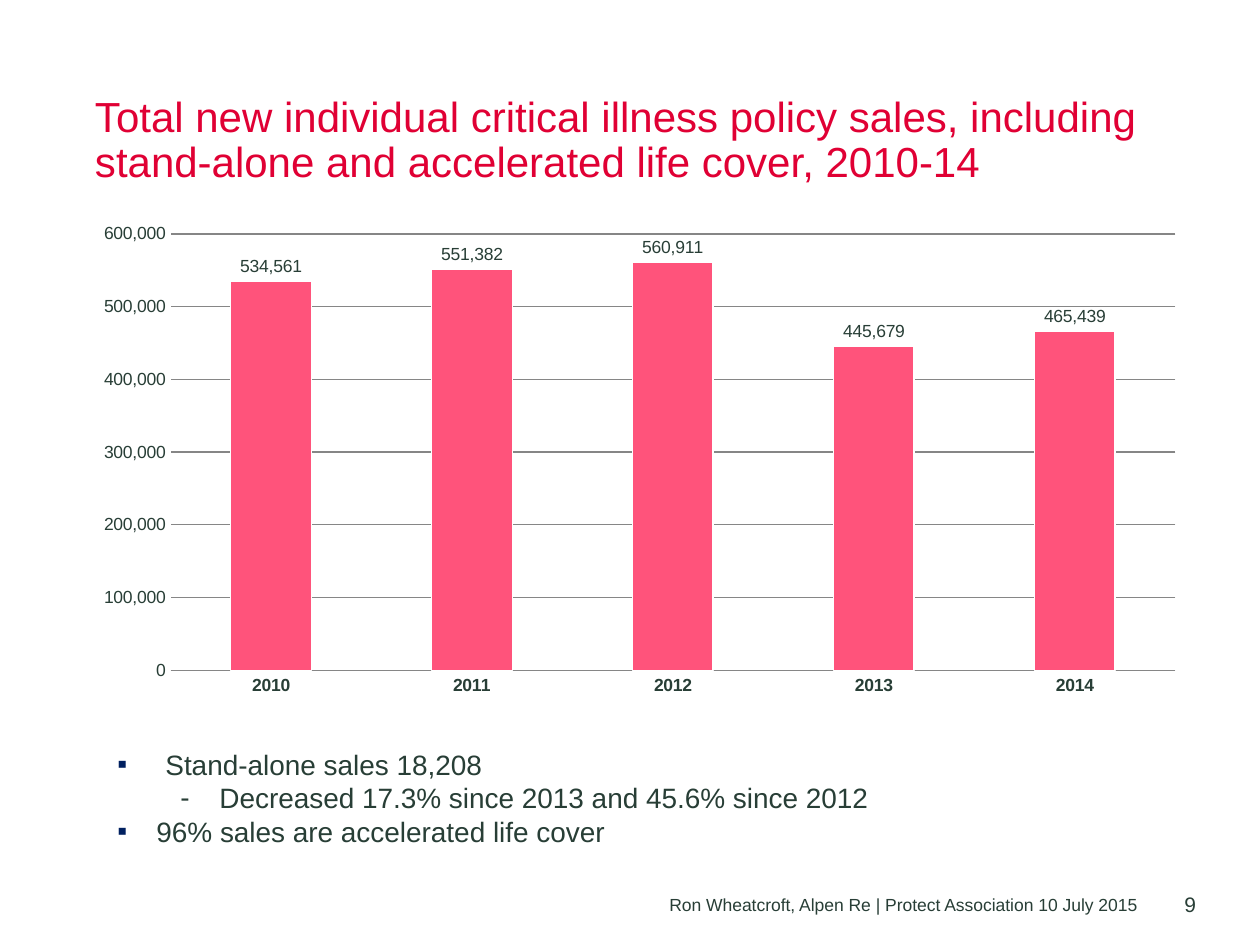
from lxml.etree import SubElement
from pptx import Presentation
from pptx.chart.data import CategoryChartData
from pptx.dml.color import RGBColor
from pptx.enum.chart import XL_CHART_TYPE as ChartType
from pptx.enum.chart import XL_LABEL_POSITION as LabelPosition
from pptx.enum.chart import XL_TICK_MARK as TickMark
from pptx.enum.text import MSO_ANCHOR as Anchor
from pptx.enum.text import MSO_AUTO_SIZE as AutoSize
from pptx.enum.text import PP_ALIGN as Align
from pptx.oxml import parse_xml
from pptx.oxml.ns import nsdecls, qn
from pptx.util import Emu, Pt

PX_PER_INCH = 126
FONT = "Arial"
RED = "E00034"
PINK = "FF537B"
INK = "283E36"
NAVY = "002060"
GRID = "868686"
WHITE = "FFFFFF"

SALES = {"2010": 534561, "2011": 551382, "2012": 560911, "2013": 445679, "2014": 465439}
BULLETS = [
    ("Stand-alone sales 18,208", 0, 48, 48, "▪", NAVY),
    ("Decreased 17.3% since 2013 and 45.6% since 2012", 1, 102, 39, "‑", INK),
    ("96% sales are accelerated life cover", 0, 39, 39, "▪", NAVY),
]


def px(length):
    return Emu(round(length * 914400 / PX_PER_INCH))


def color(value):
    return RGBColor.from_string(value)


def set_font(font, size, value=INK, bold=False):
    font.name = FONT
    font.size = Pt(size)
    font.bold = bold
    font.color.rgb = color(value)


def clear_insets(frame):
    frame.margin_left = frame.margin_top = frame.margin_right = frame.margin_bottom = 0


def add_title(slide, box):
    title = slide.shapes.title
    title.left, title.top, title.width, title.height = map(px, box)
    frame = title.text_frame
    clear_insets(frame)
    frame.auto_size = AutoSize.NONE
    frame.vertical_anchor = Anchor.TOP
    frame.text = (
        "Total new individual critical illness policy sales, including "
        "stand-alone and accelerated life cover, 2010-14"
    )
    paragraph = frame.paragraphs[0]
    paragraph.alignment = Align.LEFT
    paragraph.line_spacing = 0.9
    set_font(paragraph.font, 24, RED)


def set_plot_layout(chart, x, y, width, height):
    plot_area = chart._chartSpace.chart.plotArea
    for old in plot_area.findall(qn("c:layout")):
        plot_area.remove(old)
    layout = parse_xml(f"<c:layout {nsdecls('c')}/>")
    manual = SubElement(layout, qn("c:manualLayout"))
    settings = {
        "layoutTarget": "inner", "xMode": "edge", "yMode": "edge",
        "x": x, "y": y, "w": width, "h": height,
    }
    for name, value in settings.items():
        SubElement(manual, qn(f"c:{name}")).set("val", str(value))
    plot_area.insert(0, layout)


def add_sales_chart(slide, box):
    data = CategoryChartData(number_format="#,##0")
    data.categories = list(SALES)
    data.add_series("Series 1", list(SALES.values()))
    chart = slide.shapes.add_chart(ChartType.COLUMN_CLUSTERED, *map(px, box), data).chart
    chart.has_legend = False
    chart.has_title = False
    set_font(chart.font, 10)
    set_plot_layout(chart, 0.07, 0.02, 0.93, 0.88)

    category_axis = chart.category_axis
    category_axis.major_tick_mark = TickMark.NONE
    set_font(category_axis.tick_labels.font, 10, bold=True)

    value_axis = chart.value_axis
    value_axis.minimum_scale = 0
    value_axis.maximum_scale = 600000
    value_axis.major_unit = 100000
    value_axis.major_tick_mark = TickMark.NONE
    value_axis.format.line.fill.background()
    value_axis.tick_labels.number_format = "#,##0"
    value_axis.tick_labels.number_format_is_linked = False
    for line in (category_axis.format.line, value_axis.major_gridlines.format.line):
        line.color.rgb = color(GRID)
        line.width = Pt(0.75)

    plot = chart.plots[0]
    plot.gap_width = 150
    plot.vary_by_categories = False
    series = plot.series[0]
    series.format.fill.solid()
    series.format.fill.fore_color.rgb = color(PINK)
    series.format.line.color.rgb = color(WHITE)
    series.format.line.width = Pt(0.75)
    labels = series.data_labels
    labels.show_value = True
    labels.position = LabelPosition.OUTSIDE_END
    labels.number_format = "#,##0"
    labels.number_format_is_linked = False
    set_font(labels.font, 10)


def set_bullet(paragraph, indent, hanging, symbol, value):
    properties = paragraph._p.get_or_add_pPr()
    properties.set("marL", str(px(indent)))
    properties.set("indent", str(-px(hanging)))
    bullet_color = SubElement(properties, qn("a:buClr"))
    SubElement(bullet_color, qn("a:srgbClr")).set("val", value)
    SubElement(properties, qn("a:buFont")).set("typeface", FONT)
    SubElement(properties, qn("a:buChar")).set("char", symbol)


def add_bullets(slide, box):
    frame = slide.shapes.add_textbox(*map(px, box)).text_frame
    frame.word_wrap = True
    for index, (text, level, *bullet) in enumerate(BULLETS):
        paragraph = frame.add_paragraph() if index else frame.paragraphs[0]
        paragraph.text = text
        paragraph.level = level
        set_bullet(paragraph, *bullet)
        set_font(paragraph.font, 16)


def add_footer_text(slide, box, text, size):
    frame = slide.shapes.add_textbox(*map(px, box)).text_frame
    clear_insets(frame)
    frame.word_wrap = False
    frame.vertical_anchor = Anchor.BOTTOM
    paragraph = frame.paragraphs[0]
    paragraph.text = text
    paragraph.alignment = Align.RIGHT
    set_font(paragraph.font, size)


def main():
    presentation = Presentation()
    presentation.slide_width = px(1260)
    presentation.slide_height = px(945)
    slide = presentation.slides.add_slide(presentation.slide_layouts[5])
    add_title(slide, (95, 96, 1101, 96))
    add_sales_chart(slide, (95, 224, 1081, 496))
    add_bullets(slide, (105, 741, 1091, 115))
    footer = "Ron Wheatcroft, Alpen Re | Protect Association 10 July 2015"
    add_footer_text(slide, (323, 896, 814, 19), footer, 10)
    add_footer_text(slide, (1166, 892, 30, 25), "9", 12)
    presentation.save("out.pptx")


if __name__ == "__main__":
    main()
